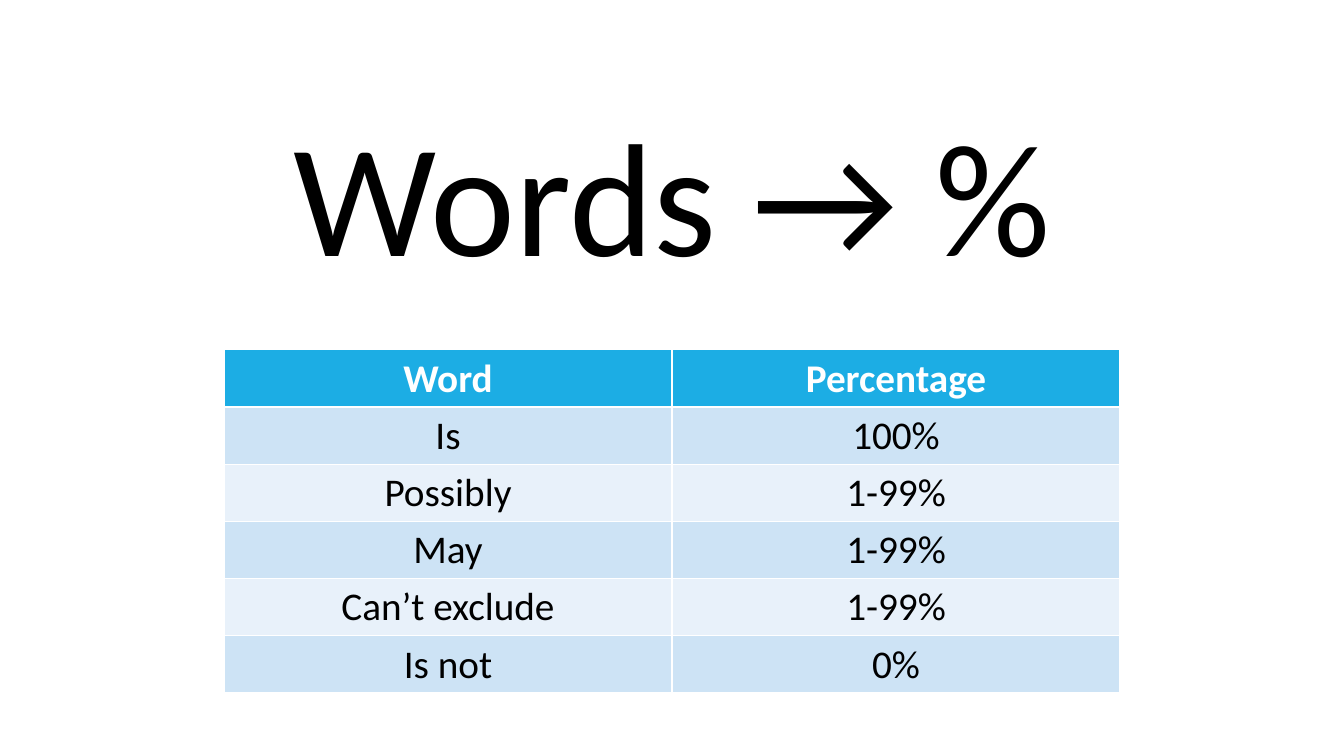
import pptx
import pptx.dml.color
import pptx.enum.text
import pptx.util

BLACK = pptx.dml.color.RGBColor(0x00, 0x00, 0x00)
WHITE = pptx.dml.color.RGBColor(0xFF, 0xFF, 0xFF)
HEADER_BLUE = pptx.dml.color.RGBColor(0x1C, 0xAD, 0xE4)
BAND_DARK = pptx.dml.color.RGBColor(0xCD, 0xE3, 0xF5)
BAND_LIGHT = pptx.dml.color.RGBColor(0xE8, 0xF1, 0xFA)

WORD_ROWS = [
    ("Word", "Percentage"),
    ("Is", "100%"),
    ("Possibly", "1-99%"),
    ("May", "1-99%"),
    ("Can’t exclude", "1-99%"),
    ("Is not", "0%"),
]


def write_text(frame, text, size, color=BLACK, bold=False, font="Calibri"):
    para = frame.paragraphs[0]
    para.alignment = pptx.enum.text.PP_ALIGN.CENTER
    span = para.add_run()
    span.text = text
    span.font.name = font
    span.font.size = pptx.util.Pt(size)
    span.font.bold = bold
    span.font.color.rgb = color


class SlideBuilder:
    """Builds a slide from elements placed by shares of its size."""

    def __init__(self, deck, title_size=115, table_size=28):
        self.deck = deck
        self.title_size = title_size
        self.table_size = table_size
        self.page = deck.slides.add_slide(deck.slide_layouts[5])

    def place(self, left, top, width, height):
        page_width, page_height = self.deck.slide_width, self.deck.slide_height
        return (int(left * page_width), int(top * page_height),
                int(width * page_width), int(height * page_height))

    def title(self, text, *shares):
        box = self.page.shapes.title
        box.left, box.top, box.width, box.height = self.place(*shares)
        frame = box.text_frame
        frame.word_wrap = True
        frame.auto_size = pptx.enum.text.MSO_AUTO_SIZE.SHAPE_TO_FIT_TEXT
        frame.vertical_anchor = pptx.enum.text.MSO_ANCHOR.TOP
        write_text(frame, text, self.title_size)

    def table(self, rows, *shares):
        shape = self.page.shapes.add_table(len(rows), len(rows[0]), *self.place(*shares))
        for row_index, row in enumerate(rows):
            header = row_index == 0
            band = BAND_DARK if row_index % 2 else BAND_LIGHT
            for column_index, text in enumerate(row):
                cell = shape.table.cell(row_index, column_index)
                cell.fill.solid()
                cell.fill.fore_color.rgb = HEADER_BLUE if header else band
                write_text(cell.text_frame, text, self.table_size,
                           color=WHITE if header else BLACK, bold=header)


def main():
    deck = pptx.Presentation()
    deck.slide_width = pptx.util.Inches(13.33)
    deck.slide_height = pptx.util.Inches(7.5)
    builder = SlideBuilder(deck)
    builder.title("Words → %", 0, 0.12, 1, 0.27)
    builder.table(WORD_ROWS, 1 / 6, 3.47 / 7.5, 2 / 3, 3.4 / 7.5)
    deck.save("out.pptx")


if __name__ == "__main__":
    main()
